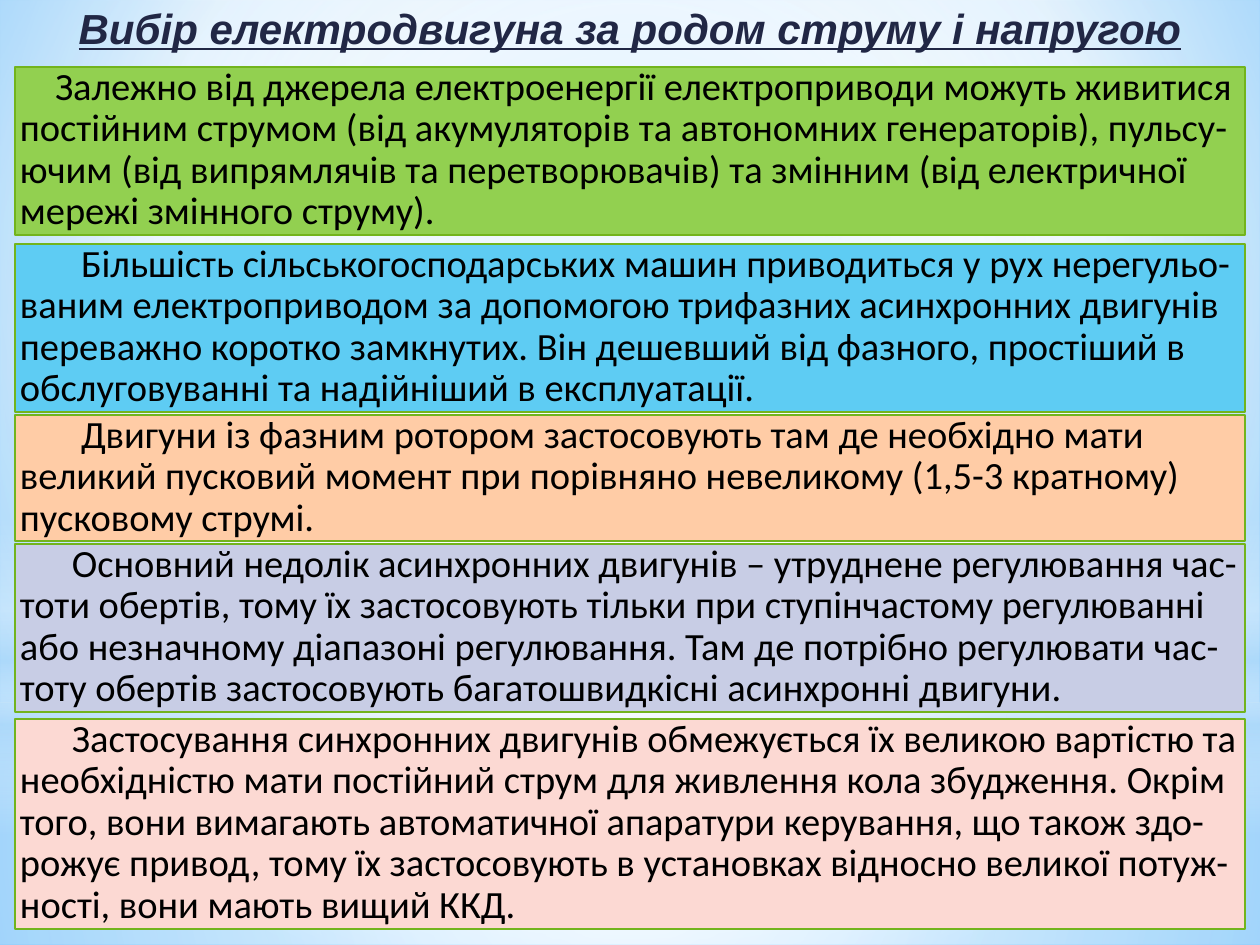
from lxml import etree
from pptx import Presentation
from pptx.dml.color import RGBColor
from pptx.enum.shapes import MSO_SHAPE
from pptx.enum.text import MSO_ANCHOR, MSO_AUTO_SIZE, PP_ALIGN
from pptx.oxml.ns import qn
from pptx.util import Emu, Pt

RECT, OVAL = MSO_SHAPE.RECTANGLE, MSO_SHAPE.OVAL
LEFT, MID = PP_ALIGN.LEFT, PP_ALIGN.CENTER
TOP = MSO_ANCHOR.TOP
GROW = MSO_AUTO_SIZE.SHAPE_TO_FIT_TEXT

NAVY = RGBColor(0x21, 0x27, 0x45)
BLACK = RGBColor(0x00, 0x00, 0x00)
EDGE = RGBColor(0x72, 0xB4, 0x1D)
GREEN = RGBColor(0x92, 0xD0, 0x50)
BLUE = RGBColor(0x5E, 0xCC, 0xF3)
PEACH = RGBColor(0xFF, 0xCC, 0xA6)
LILAC = RGBColor(0xC8, 0xCD, 0xE5)
PINK = RGBColor(0xFC, 0xD9, 0xD3)
WHITE = RGBColor(0xFF, 0xFF, 0xFF)
PALE = RGBColor(0xB4, 0xDC, 0xFA)
SKY = RGBColor(0x9E, 0xD5, 0xFF)
DEEP = RGBColor(0x5B, 0xB9, 0xFF)

WIDE, HIGH = 1260, 945
EDGE_X, BOX_W, ROW = 15, 1230, 42
CENTER = (50, 50, 50, 50)

TITLE = "Вибір електродвигуна за родом струму і напругою"
BOXES = [
    (67, 4, 35, GREEN,
     "Залежно від джерела електроенергії електроприводи можуть живитися "
     "постійним струмом (від акумуляторів та автономних генераторів), "
     "пульсу-ючим (від випрямлячів та перетворювачів) та змінним "
     "(від електричної мережі змінного струму)."),
    (244, 4, 61, BLUE,
     "Більшість сільськогосподарських машин приводиться у рух "
     "нерегульо-ваним електроприводом за допомогою трифазних асинхронних "
     "двигунів переважно коротко замкнутих. Він дешевший від фазного, "
     "простіший в обслуговуванні та надійніший в експлуатації."),
    (415, 3, 61, PEACH,
     "Двигуни із фазним ротором застосовують там де необхідно мати "
     "великий пусковий момент при порівняно невеликому (1,5-3 кратному) "
     "пусковому струмі."),
    (544, 4, 52, LILAC,
     "Основний недолік асинхронних двигунів – утруднене регулювання "
     "час-тоти обертів, тому їх застосовують тільки при ступінчастому "
     "регулюванні або незначному діапазоні регулювання. Там де потрібно "
     "регулювати час-тоту обертів застосовують багатошвидкісні "
     "асинхронні двигуни."),
    (719, 5, 52, PINK,
     "Застосування синхронних двигунів обмежується їх великою вартістю та "
     "необхідністю мати постійний струм для живлення кола збудження. Окрім "
     "того, вони вимагають автоматичної апаратури керування, що також "
     "здо-рожує привод, тому їх застосовують в установках відносно великої "
     "потуж-ності, вони мають вищий ККД."),
]


def px(num):
    return Emu(round(num * 914400 / 126))


def blend(root, stops, focus=None):
    grad = root.find(".//" + qn("a:gradFill"))
    for kid in list(grad):
        grad.remove(kid)
    line = etree.SubElement(grad, qn("a:gsLst"))
    for pos, color, alpha in stops:
        stop = etree.SubElement(line, qn("a:gs"), pos=str(pos * 1000))
        tint = etree.SubElement(stop, qn("a:srgbClr"), val=str(color))
        if alpha < 100:
            etree.SubElement(tint, qn("a:alpha"), val=str(alpha * 1000))
    if focus:
        way = etree.SubElement(grad, qn("a:path"), path="circle")
        sides = {side: str(num * 1000) for side, num in zip("ltrb", focus)}
        etree.SubElement(way, qn("a:fillToRect"), **sides)
    else:
        etree.SubElement(grad, qn("a:lin"), ang="5400000", scaled="0")


def write(frame, text, size=22, font="Calibri", color=BLACK, align=LEFT,
          space=0.9, inset=0, indent=0, strong=False):
    frame.word_wrap = True
    frame.auto_size = GROW
    frame.vertical_anchor = TOP
    frame.margin_left = frame.margin_right = px(inset)
    frame.margin_top = frame.margin_bottom = 0
    para = frame.paragraphs[0]
    para.alignment = align
    para.line_spacing = space
    if indent:
        props = para._p.get_or_add_pPr()
        props.set("marL", "0")
        props.set("indent", str(px(indent)))
    run = para.add_run()
    run.text = text
    face = run.font
    face.size, face.name = Pt(size), font
    face.color.rgb = color
    face.bold = face.italic = face.underline = strong


class Deck:
    def __init__(self):
        self.show = Presentation()
        self.show.slide_width, self.show.slide_height = px(WIDE), px(HIGH)
        self.slide = self.show.slides.add_slide(self.show.slide_layouts[6])

    def shape(self, kind, left, top, width, height):
        item = self.slide.shapes.add_shape(
            kind, px(left), px(top), px(width), px(height))
        item.shadow.inherit = False
        return item

    def back(self, stops, focus):
        self.slide.background.fill.gradient()
        blend(self.slide.element, stops, focus)

    def layer(self, kind, top, height, stops, focus=None):
        item = self.shape(kind, 0, top, WIDE, height)
        item.line.fill.background()
        item.fill.gradient()
        blend(item.element, stops, focus)

    def title(self, text, top, height):
        box = self.slide.shapes.add_textbox(
            px(EDGE_X), px(top), px(BOX_W), px(height))
        write(box.text_frame, text, size=24, font="Arial", color=NAVY,
              align=MID, space=0.85, strong=True)

    def panel(self, top, rows, indent, color, text):
        item = self.shape(RECT, EDGE_X, top, BOX_W, rows * ROW)
        item.fill.solid()
        item.fill.fore_color.rgb = color
        item.line.color.rgb = EDGE
        item.line.width = Pt(1.25)
        write(item.text_frame, text, inset=5, indent=indent)


def main():
    deck = Deck()
    deck.back([(0, SKY, 100), (60, WHITE, 100), (100, DEEP, 100)],
              (20, 10, 20, 60))
    deck.layer(RECT, 703, 242,
               [(0, WHITE, 91), (37, WHITE, 76), (100, PALE, 79)], CENTER)
    deck.layer(RECT, 0, 703,
               [(0, WHITE, 89), (48, WHITE, 62), (100, PALE, 79)], CENTER)
    deck.layer(RECT, 519, 315,
               [(0, WHITE, 0), (29, WHITE, 30), (45, PALE, 40),
                (55, WHITE, 26), (65, PALE, 60), (100, WHITE, 0)])
    deck.layer(OVAL, 220, 703, [(0, WHITE, 100), (56, WHITE, 0)], CENTER)
    deck.title(TITLE, 10, 43)
    for box in BOXES:
        deck.panel(*box)
    deck.show.save("out.pptx")


if __name__ == "__main__":
    main()
